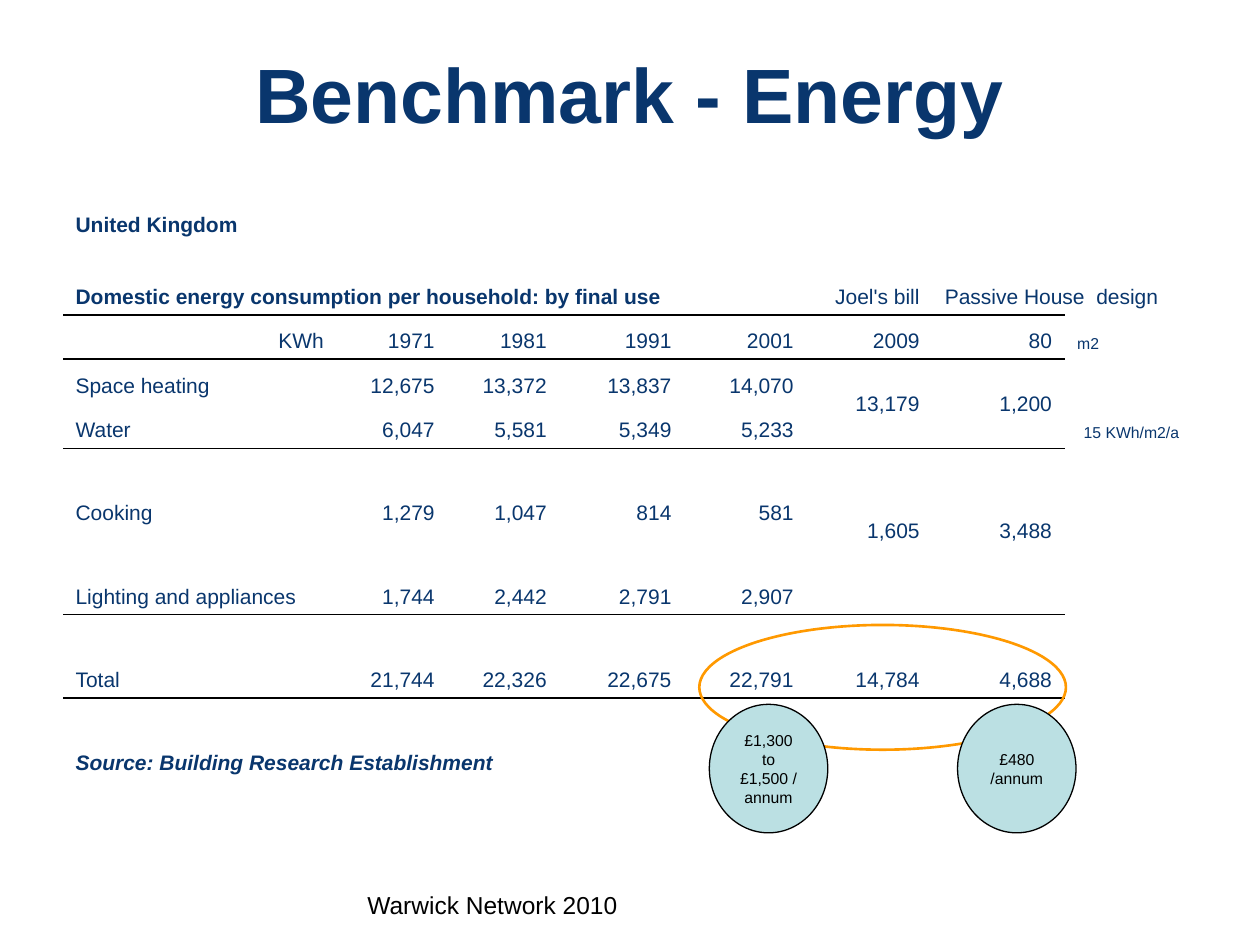
from dataclasses import dataclass

from lxml.etree import SubElement
from pptx import Presentation
from pptx.dml.color import RGBColor
from pptx.enum.shapes import MSO_SHAPE
from pptx.enum.text import MSO_ANCHOR, PP_ALIGN
from pptx.oxml.ns import qn
from pptx.util import Inches, Pt


@dataclass(frozen=True)
class Theme:
    font: str = "Arial"
    navy: str = "09366D"
    black: str = "000000"
    orange: str = "FF9900"
    pale_blue: str = "BBE0E3"
    title_size: float = 44
    footer_size: float = 14
    body_size: float = 12
    small_size: float = 9
    rule_width: float = 1
    ring_width: float = 1.5
    outline_width: float = 0.75


THEME = Theme()
SLIDE_WIDTH, SLIDE_HEIGHT = Inches(10), Inches(7.5)

COLUMN_WIDTHS = [2.17, 0.88, 0.89, 0.99, 0.97, 1, 1.05, 1.06]
ROW_HEIGHTS = [0.66, 0.57, 0.35, 0.36, 0.35, 0.66, 0.66, 0.66, 0.66]
ENERGY_ROWS = [
    ["United Kingdom"],
    ["Domestic energy consumption per household: by final use",
     "", "", "", "", "Joel's bill", "Passive House  design"],
    ["KWh", "1971", "1981", "1991", "2001", "2009", "80", "m2"],
    ["Space heating", "12,675", "13,372", "13,837", "14,070", "13,179", "1,200", "15 KWh/m2/a"],
    ["Water", "6,047", "5,581", "5,349", "5,233"],
    ["Cooking", "1,279", "1,047", "814", "581", "1,605", "3,488"],
    ["Lighting and appliances", "1,744", "2,442", "2,791", "2,907"],
    ["Total", "21,744", "22,326", "22,675", "22,791", "14,784", "4,688"],
    ["Source: Building Research Establishment"],
]
MERGES = [
    ((1, 0), (1, 4)), ((1, 6), (1, 7)),
    ((3, 5), (4, 5)), ((3, 6), (4, 6)), ((3, 7), (4, 7)),
    ((5, 5), (6, 5)), ((5, 6), (6, 6)),
    ((8, 0), (8, 2)),
]
RULED_ROWS = {1, 2, 4, 6, 7}
NOTE_COLUMN = 7
BOLD_ROWS = {0, 1, 8}
SPECIAL_ALIGNMENT = {
    (1, 6): PP_ALIGN.LEFT,
    (2, 0): PP_ALIGN.RIGHT,
    (2, 7): PP_ALIGN.LEFT,
    (3, 7): PP_ALIGN.CENTER,
}


def share(left, top, width, height):
    return (int(SLIDE_WIDTH * left / 100), int(SLIDE_HEIGHT * top / 100),
            int(SLIDE_WIDTH * width / 100), int(SLIDE_HEIGHT * height / 100))


def write(text_frame, text, size, color, alignment, bold=False, italic=False):
    text_frame.text = text
    paragraph = text_frame.paragraphs[0]
    paragraph.alignment = alignment
    for run in paragraph.runs:
        run.font.name = THEME.font
        run.font.size = Pt(size)
        run.font.color.rgb = RGBColor.from_string(color)
        run.font.bold = bold
        run.font.italic = italic


def add_title(slide, text):
    title = slide.shapes.title
    title.left, title.top, title.width, title.height = share(5, 4, 90, 11.33)
    write(title.text_frame, text, THEME.title_size, THEME.navy, PP_ALIGN.CENTER, bold=True)
    title.text_frame.vertical_anchor = MSO_ANCHOR.BOTTOM


def set_borders(cell, top, bottom):
    properties = cell._tc.get_or_add_tcPr()
    for tag, visible in (("a:lnL", False), ("a:lnR", False), ("a:lnT", top), ("a:lnB", bottom)):
        line = SubElement(properties, qn(tag), w=str(Pt(THEME.rule_width)))
        if visible:
            fill = SubElement(line, qn("a:solidFill"))
            SubElement(fill, qn("a:srgbClr"), val=THEME.black)
        else:
            SubElement(line, qn("a:noFill"))


def fill_cell(cell, row, column, text):
    alignment = PP_ALIGN.RIGHT if column else PP_ALIGN.LEFT
    alignment = SPECIAL_ALIGNMENT.get((row, column), alignment)
    size = THEME.small_size if column == NOTE_COLUMN else THEME.body_size
    write(cell.text_frame, text, size, THEME.navy, alignment,
          bold=column == 0 and row in BOLD_ROWS, italic=row == len(ENERGY_ROWS) - 1)
    centred = cell.is_merge_origin and cell.span_height > 1 and column != NOTE_COLUMN
    cell.vertical_anchor = MSO_ANCHOR.MIDDLE if centred else MSO_ANCHOR.BOTTOM


def add_energy_table(slide):
    frame = slide.shapes.add_table(len(ROW_HEIGHTS), len(COLUMN_WIDTHS), *share(5, 16.93, 90, 66))
    table = frame.table
    table.first_row = False
    table.horz_banding = False
    for column, width in zip(table.columns, COLUMN_WIDTHS):
        column.width = Inches(width)
    for row, height in zip(table.rows, ROW_HEIGHTS):
        row.height = Inches(height)
    for start, end in MERGES:
        table.cell(*start).merge(table.cell(*end))
    for row, texts in enumerate(ENERGY_ROWS):
        for column in range(len(COLUMN_WIDTHS)):
            cell = table.cell(row, column)
            ruled = column != NOTE_COLUMN
            set_borders(cell, ruled and row - 1 in RULED_ROWS, ruled and row in RULED_ROWS)
            cell.fill.background()
            if column < len(texts) and texts[column]:
                fill_cell(cell, row, column, texts[column])


def add_ellipse(slide, bounds, line_color, line_width, fill=None):
    ellipse = slide.shapes.add_shape(MSO_SHAPE.OVAL, *bounds)
    ellipse.shadow.inherit = False
    ellipse.line.color.rgb = RGBColor.from_string(line_color)
    ellipse.line.width = Pt(line_width)
    if fill:
        ellipse.fill.solid()
        ellipse.fill.fore_color.rgb = RGBColor.from_string(fill)
    else:
        ellipse.fill.background()
    return ellipse


def add_cost_bubble(slide, left, text):
    bubble = add_ellipse(slide, share(left, 74.53, 9.4, 13.6),
                         THEME.black, THEME.outline_width, THEME.pale_blue)
    bubble.text_frame.word_wrap = True
    bubble.text_frame.vertical_anchor = MSO_ANCHOR.MIDDLE
    write(bubble.text_frame, text, THEME.small_size, THEME.black, PP_ALIGN.CENTER)


def add_footer(slide, text):
    text_frame = slide.shapes.add_textbox(*share(26.7, 91.07, 23.3, 6.93)).text_frame
    text_frame.word_wrap = True
    text_frame.vertical_anchor = MSO_ANCHOR.BOTTOM
    write(text_frame, text, THEME.footer_size, THEME.black, PP_ALIGN.RIGHT)


def main():
    presentation = Presentation()
    presentation.slide_width, presentation.slide_height = SLIDE_WIDTH, SLIDE_HEIGHT
    slide = presentation.slides.add_slide(presentation.slide_layouts.get_by_name("Title Only"))
    add_title(slide, "Benchmark - Energy")
    add_energy_table(slide)
    add_ellipse(slide, share(55.5, 66.13, 29.1, 13.2), THEME.orange, THEME.ring_width)
    for left, cost in ((56.3, "£1,300 to £1,500 /annum"), (76, "£480 /annum")):
        add_cost_bubble(slide, left, cost)
    add_footer(slide, "Warwick Network 2010")
    presentation.save("out.pptx")


if __name__ == "__main__":
    main()
